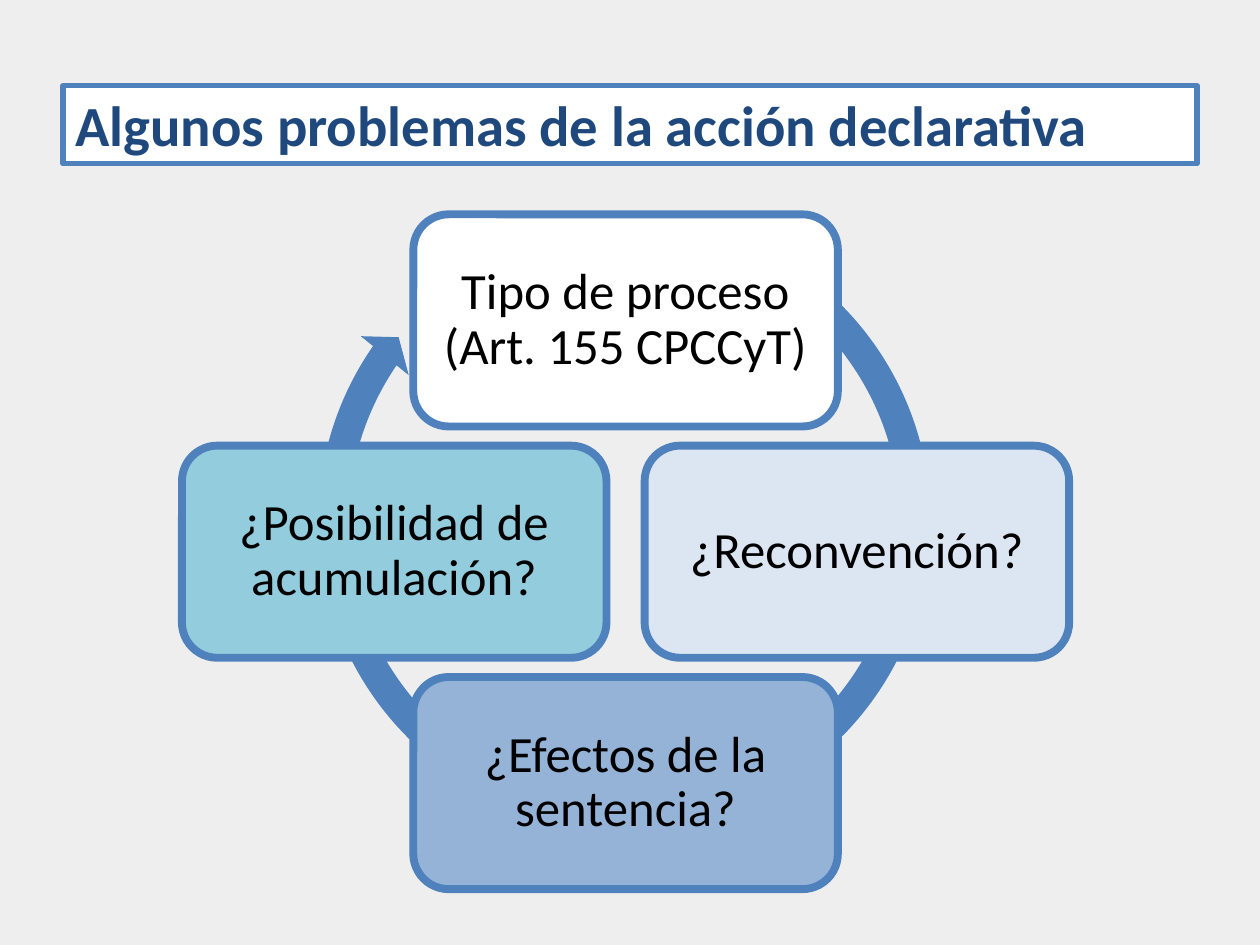
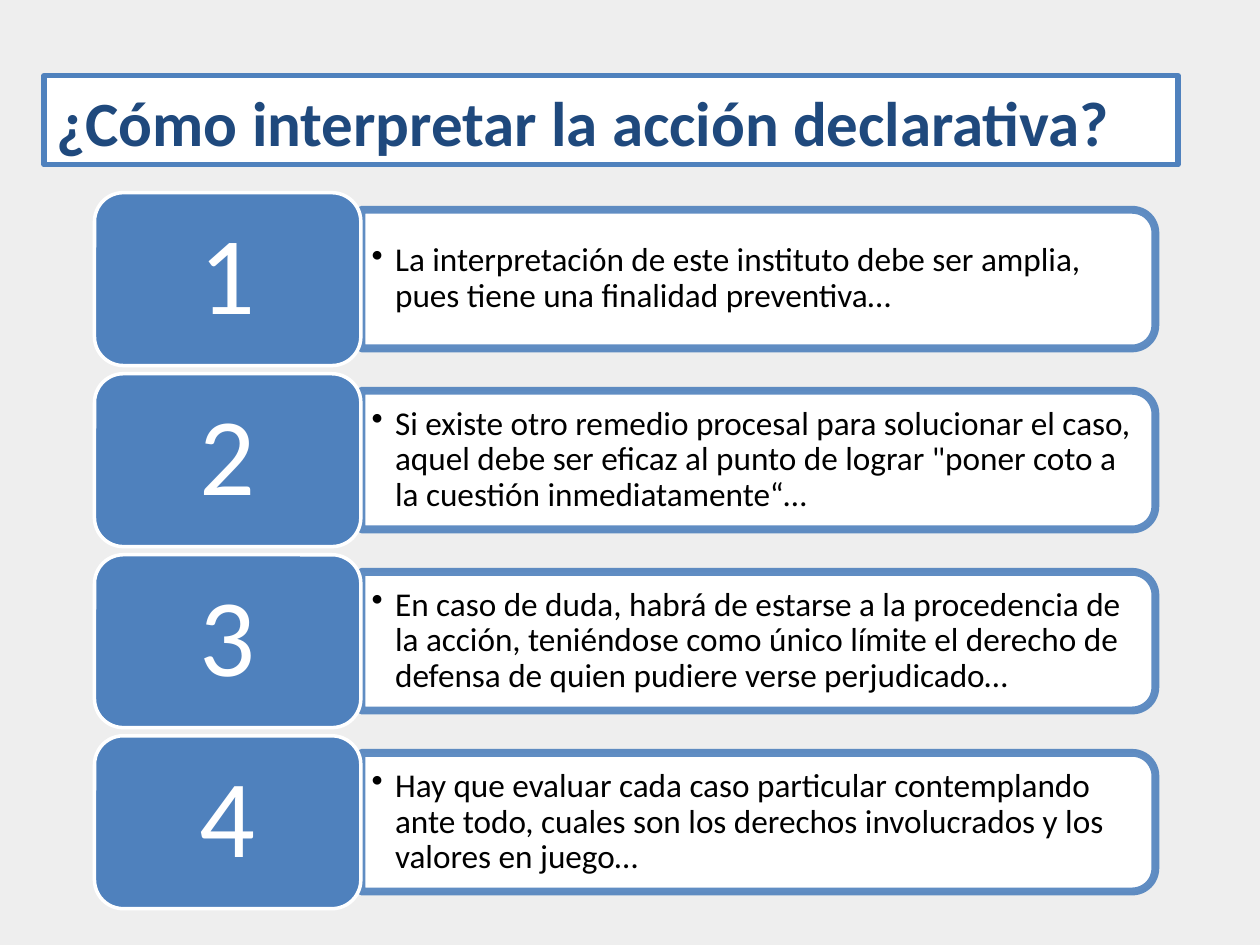
from lxml import etree
from pptx import Presentation
from pptx.dml.color import RGBColor
from pptx.enum.shapes import MSO_SHAPE as Preset
from pptx.enum.text import MSO_ANCHOR as Anchor, PP_ALIGN as Align
from pptx.oxml.ns import qn
from pptx.util import Pt

GREY = RGBColor(0xEE, 0xEE, 0xEE)
WHITE = RGBColor(0xFF, 0xFF, 0xFF)
BLACK = RGBColor(0x00, 0x00, 0x00)
BLUE = RGBColor(0x4F, 0x81, 0xBD)
NAVY = RGBColor(0x1F, 0x49, 0x7D)
PALE_BLUE = RGBColor(0xDC, 0xE6, 0xF2)
MID_BLUE = RGBColor(0x95, 0xB3, 0xD7)
AQUA = RGBColor(0x93, 0xCD, 0xDD)

CYCLE_CENTER = (357.5, 315.3)
CYCLE_STEP = 132.2
CARD_SIZE = (242.6, 121.2)
# Text, fill and direction from the centre of the cycle
CYCLE_CARDS = [
    ("Tipo de proceso (Art. 155 CPCCyT)", WHITE, (0, -1)),
    ("¿Reconvención?", PALE_BLUE, (1, 0)),
    ("¿Efectos de la sentencia?", MID_BLUE, (0, 1)),
    ("¿Posibilidad de acumulación?", AQUA, (-1, 0)),
]

FIRST_ROW_MIDDLE = 159.5
ROW_PITCH = 103.45
CRITERIA = [
    "La interpretación de este instituto debe ser amplia, pues tiene una "
    "finalidad preventiva…",
    "Si existe otro remedio procesal para solucionar el caso, aquel debe ser "
    "eficaz al punto de lograr \"poner coto a la cuestión inmediatamente“…",
    "En caso de duda, habrá de estarse a la procedencia de la acción, "
    "teniéndose como único límite el derecho de defensa de quien pudiere "
    "verse perjudicado…",
    "Hay que evaluar cada caso particular contemplando ante todo, cuales son "
    "los derechos involucrados y los valores en juego…",
]


class Deck:
    """Holds the shared style and the slide being built."""

    font = "Calibri"

    def __init__(self):
        self.prs = Presentation()
        self.prs.slide_width, self.prs.slide_height = Pt(720), Pt(540)
        self.slide = None

    def new_slide(self):
        self.slide = self.prs.slides.add_slide(self.prs.slide_layouts[6])
        background = self.slide.background.fill
        background.solid()
        background.fore_color.rgb = GREY

    def shape(self, preset, box, fill, line=None, width=0):
        """Add a preset shape; box is left, top, width, height in points."""
        shape = self.slide.shapes.add_shape(preset, *map(Pt, box))
        shape.shadow.inherit = False
        shape.fill.solid()
        shape.fill.fore_color.rgb = fill
        if line is None:
            shape.line.fill.background()
        else:
            shape.line.color.rgb = line
            shape.line.width = Pt(width)
        return shape

    def add_text(self, holder, text, size, color, align=Align.CENTER,
                 anchor=Anchor.MIDDLE, insets=(7.2, 3.6), spacing=0.9,
                 bold=False):
        """Put one paragraph in a shape; insets are horizontal and vertical."""
        frame = holder.text_frame
        frame.word_wrap = True
        frame.vertical_anchor = anchor
        frame.margin_left = frame.margin_right = Pt(insets[0])
        frame.margin_top = frame.margin_bottom = Pt(insets[1])
        paragraph = frame.paragraphs[0]
        paragraph.alignment = align
        paragraph.line_spacing = spacing
        run = paragraph.add_run()
        run.text = text
        run.font.name, run.font.size = self.font, Pt(size)
        run.font.bold, run.font.color.rgb = bold, color

    def title(self, text, box, size):
        banner = self.shape(Preset.RECTANGLE, box, WHITE, BLUE, 3)
        self.add_text(banner, text, size, NAVY, Align.LEFT, Anchor.BOTTOM,
                      spacing=1.0, bold=True)

    def cycle_arrow(self, box):
        arrow = self.shape(Preset.CIRCULAR_ARROW, box, BLUE)
        for i, value in enumerate((0.047, 2.729, 128.772, 179.997, 0.048)):
            arrow.adjustments[i] = value

    def cycle_card(self, text, fill, direction):
        width, height = CARD_SIZE
        x, y = (c + CYCLE_STEP * d for c, d in zip(CYCLE_CENTER, direction))
        card = self.shape(Preset.ROUNDED_RECTANGLE,
                          (x - width / 2, y - height / 2, width, height),
                          fill, BLUE, 4.5)
        self.add_text(card, text, 29, BLACK, insets=(8.7, 8.7))

    def side_panel(self, middle):
        """Add a panel rounded on its right side, centred on middle."""
        thickness, length, center = 79.2, 453.6, 433.4
        panel = self.shape(Preset.ROUND_2_SAME_RECTANGLE,
                           (center - thickness / 2, middle - length / 2,
                            thickness, length), WHITE, BLUE, 4.5)
        panel.rotation = 90
        line_color = panel.element.spPr.find(
            f"{qn('a:ln')}/{qn('a:solidFill')}/{qn('a:srgbClr')}")
        etree.SubElement(line_color, qn("a:alpha"), val="90000")

    def bullet_text(self, text, middle):
        height = 71.4
        box = self.slide.shapes.add_textbox(
            Pt(206.6), Pt(middle - height / 2), Pt(450), Pt(height))
        properties = box.text_frame.paragraphs[0]._p.get_or_add_pPr()
        properties.set("marL", str(Pt(13.5)))
        properties.set("indent", str(Pt(-13.5)))
        etree.SubElement(properties, qn("a:buChar"), char="•")
        self.add_text(box, text, 19, BLACK, Align.LEFT, insets=(5.7, 2.9))

    def number_tile(self, number, middle):
        height = 98.8
        tile = self.shape(Preset.ROUNDED_RECTANGLE,
                          (54, middle - height / 2, 152.2, height),
                          BLUE, WHITE, 2)
        self.add_text(tile, str(number), 63, WHITE, insets=(18.7, 9.4))


def main():
    deck = Deck()

    deck.new_slide()
    deck.title("Algunos problemas de la acción declarativa",
               (36, 49, 648, 44.6), 32.4)
    deck.cycle_arrow((172.8, 113.8, 368, 368))
    for text, fill, direction in CYCLE_CARDS:
        deck.cycle_card(text, fill, direction)

    deck.new_slide()
    deck.title("¿Cómo interpretar la acción declarativa?",
               (25.2, 43.2, 648, 51), 36)
    for row, criterion in enumerate(CRITERIA):
        middle = FIRST_ROW_MIDDLE + row * ROW_PITCH
        deck.side_panel(middle)
        deck.bullet_text(criterion, middle)
        deck.number_tile(row + 1, middle)

    deck.prs.save("out.pptx")


if __name__ == "__main__":
    main()
